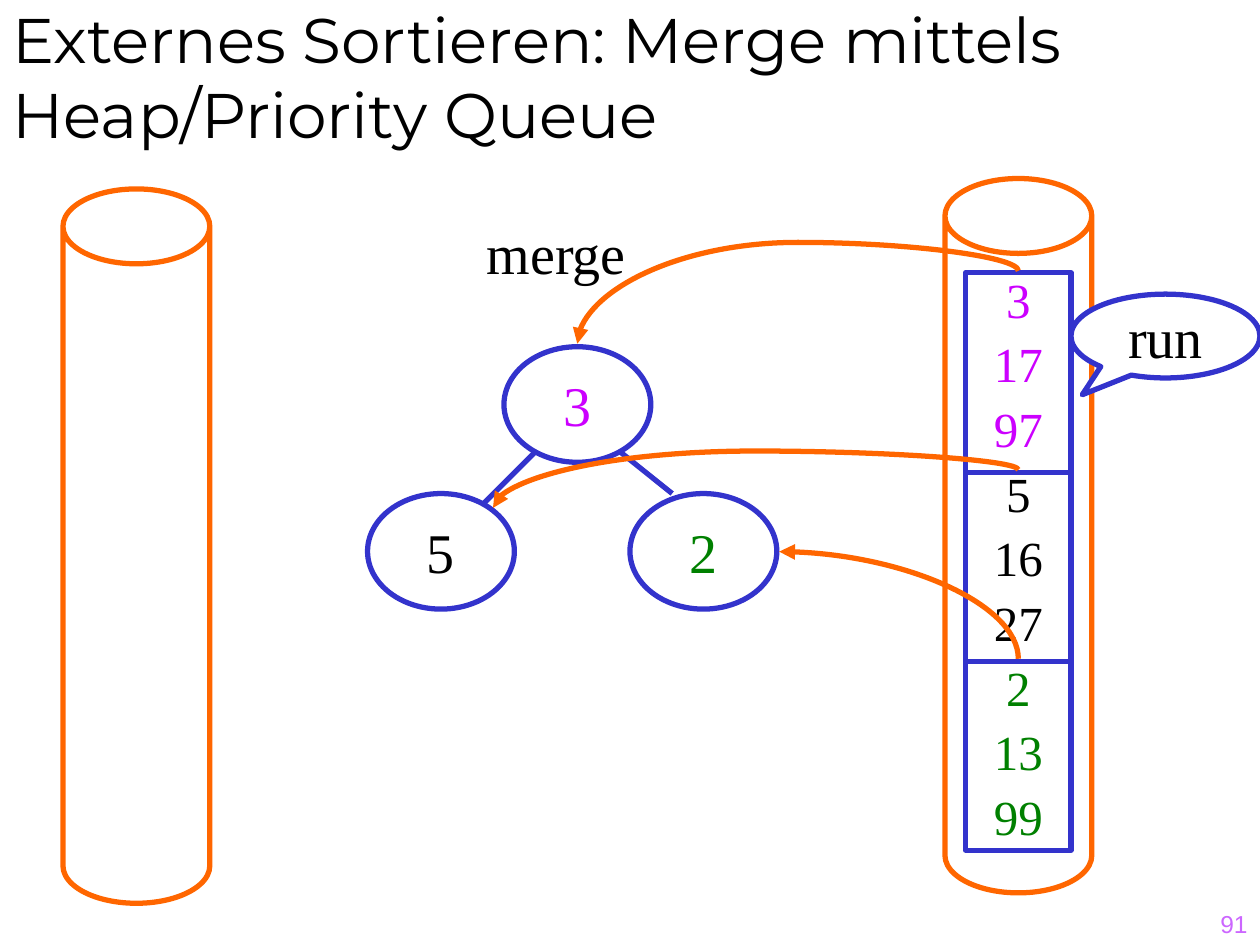
import pptx
import pptx.dml.color
import pptx.enum.shapes
import pptx.enum.text
import pptx.oxml.ns
import pptx.util

Cm = pptx.util.Cm
Pt = pptx.util.Pt
RGBColor = pptx.dml.color.RGBColor
SHAPE = pptx.enum.shapes.MSO_SHAPE
CONNECTOR = pptx.enum.shapes.MSO_CONNECTOR
ALIGN = pptx.enum.text.PP_ALIGN
ANCHOR = pptx.enum.text.MSO_ANCHOR
AUTO_SIZE = pptx.enum.text.MSO_AUTO_SIZE
qn = pptx.oxml.ns.qn

BLACK = RGBColor(0x00, 0x00, 0x00)
WHITE = RGBColor(0xFF, 0xFF, 0xFF)
ORANGE = RGBColor(0xFF, 0x66, 0x00)
BLUE = RGBColor(0x33, 0x33, 0xCC)
MAGENTA = RGBColor(0xCC, 0x00, 0xFF)
GREEN = RGBColor(0x00, 0x80, 0x00)
VIOLET = RGBColor(0xCC, 0x66, 0xFF)

SERIF = "Times New Roman"
LINE_WIDTH = Pt(3)
NODE_WIDTH, NODE_HEIGHT = 2.96, 2.33
RUN_LEFT, RUN_WIDTH = 19.47, 2.12
# Colour, values, top and height of each sorted run
RUNS = [
    (MAGENTA, ["3", "17", "97"], 5.5, 4.02),
    (BLACK, ["5", "16", "27"], 9.52, 3.81),
    (GREEN, ["2", "13", "99"], 13.33, 3.81),
]


def add_run(paragraph, text, size, color, font=SERIF, align=ALIGN.CENTER):
    paragraph.alignment = align
    run = paragraph.add_run()
    run.text = text
    run.font.name = font
    run.font.size = Pt(size)
    run.font.color.rgb = color


def set_title(slide, text):
    title = slide.shapes.title
    title.left, title.top, title.width, title.height = Cm(0), Cm(0), Cm(25.4), Cm(3.18)
    frame = title.text_frame
    frame.auto_size = AUTO_SIZE.NONE
    frame.vertical_anchor = ANCHOR.BOTTOM
    add_run(frame.paragraphs[0], text, 36, BLACK, "Montserrat", ALIGN.LEFT)


def add_label(slide, left, top, width, height, wrap=False):
    """Add an empty text box and return its text frame."""
    box = slide.shapes.add_textbox(Cm(left), Cm(top), Cm(width), Cm(height))
    box.text_frame.word_wrap = wrap
    return box.text_frame


def add_outlined(slide, kind, left, top, width, height, color, fill=WHITE):
    shape = slide.shapes.add_shape(kind, Cm(left), Cm(top), Cm(width), Cm(height))
    shape.shadow.inherit = False
    if fill is None:
        shape.fill.background()
    else:
        shape.fill.solid()
        shape.fill.fore_color.rgb = fill
    shape.line.color.rgb = color
    shape.line.width = LINE_WIDTH
    shape.text_frame.vertical_anchor = ANCHOR.MIDDLE
    shape.text_frame.word_wrap = False
    return shape


def add_tape(slide, left, top):
    tape = add_outlined(slide, SHAPE.CAN, left, top, 2.96, 14.4, ORANGE)
    tape.adjustments[0] = 0.51
    return tape


def add_numbers(tape):
    frame = tape.text_frame
    numbers = [(color, value) for color, values, _, _ in RUNS for value in values]
    for index, (color, value) in enumerate(numbers):
        paragraph = frame.add_paragraph() if index else frame.paragraphs[0]
        paragraph.line_spacing = 1.1
        add_run(paragraph, value, 28, color)


def add_callout(slide, text):
    callout = add_outlined(
        slide, SHAPE.OVAL_CALLOUT, 21.59, 5.93, 3.81, 1.69, BLUE)
    callout.adjustments[0] = -0.44
    callout.adjustments[1] = 0.7
    add_run(callout.text_frame.paragraphs[0], text, 32, BLACK)


def add_node(slide, left, top, text, color):
    node = add_outlined(slide, SHAPE.OVAL, left, top, NODE_WIDTH, NODE_HEIGHT, BLUE)
    add_run(node.text_frame.paragraphs[0], text, 32, color)


def add_line(slide, kind, start, end, color):
    connector = slide.shapes.add_connector(
        kind, Cm(start[0]), Cm(start[1]), Cm(end[0]), Cm(end[1]))
    connector.line.color.rgb = color
    connector.line.width = LINE_WIDTH
    properties = connector._element.spPr
    properties.append(properties.makeelement(qn("a:effectLst"), {}))
    return connector


def add_curved_arrow(slide, start, end, preset, rotation, flips, bend=None):
    """Add a curve that leaves start vertically: a box turned by a quarter."""
    center_x, center_y = (start[0] + end[0]) / 2, (start[1] + end[1]) / 2
    half_width, half_height = abs(start[1] - end[1]) / 2, abs(start[0] - end[0]) / 2
    connector = add_line(
        slide, CONNECTOR.CURVE,
        (center_x - half_width, center_y - half_height),
        (center_x + half_width, center_y + half_height), ORANGE)
    properties = connector._element.spPr
    transform = properties.find(qn("a:xfrm"))
    transform.set("rot", str(rotation * 60000))
    for flip in flips:
        transform.set(flip, "1")
    geometry = properties.find(qn("a:prstGeom"))
    geometry.set("prst", preset)
    if bend is not None:
        guides = geometry.find(qn("a:avLst"))
        guides.append(guides.makeelement(
            qn("a:gd"), {"name": "adj1", "fmla": f"val {round(bend * 100000)}"}))
    line = properties.find(qn("a:ln"))
    line.append(line.makeelement(qn("a:tailEnd"), {"type": "triangle"}))


def main():
    presentation = pptx.Presentation()
    presentation.slide_width, presentation.slide_height = Cm(25.4), Cm(19.05)
    slide = presentation.slides.add_slide(presentation.slide_layouts[5])

    set_title(slide, "Externes Sortieren: Merge mittels Heap/Priority Queue")
    number = add_label(slide, 20.12, 17.78, 5.28, 1.27, wrap=True)
    number.vertical_anchor = ANCHOR.BOTTOM
    add_run(number.paragraphs[0], "91", 14, VIOLET, "Arial", ALIGN.RIGHT)

    add_tape(slide, 1.27, 3.81)
    add_numbers(add_tape(slide, 19.05, 3.6))
    merge = add_label(slide, 9.55, 4.29, 3.33, 1.6)
    add_run(merge.paragraphs[0], "merge", 32, BLACK)

    for _, _, top, height in RUNS:
        add_outlined(slide, SHAPE.RECTANGLE, RUN_LEFT, top, RUN_WIDTH, height, BLUE, None)
    add_callout(slide, "run")

    add_node(slide, 10.16, 6.99, "3", MAGENTA)
    add_node(slide, 7.41, 9.95, "5", BLACK)
    add_node(slide, 12.7, 9.95, "2", GREEN)
    add_line(slide, CONNECTOR.STRAIGHT, (10.8, 9.1), (9.74, 10.16), BLUE)
    add_line(slide, CONNECTOR.STRAIGHT, (12.49, 9.1), (13.55, 9.95), BLUE)

    both = ("flipH", "flipV")
    source_x = RUN_LEFT + RUN_WIDTH / 2
    add_curved_arrow(slide, (source_x, 5.46), (11.64, 6.93),
                     "curvedConnector3", 270, both, -0.39)
    add_curved_arrow(slide, (source_x, 9.47), (9.94, 10.24),
                     "curvedConnector3", 270, both, -0.49)
    add_curved_arrow(slide, (source_x, 13.28), (15.71, 11.12),
                     "curvedConnector2", 90, ("flipH",))
    presentation.save("out.pptx")


if __name__ == "__main__":
    main()
